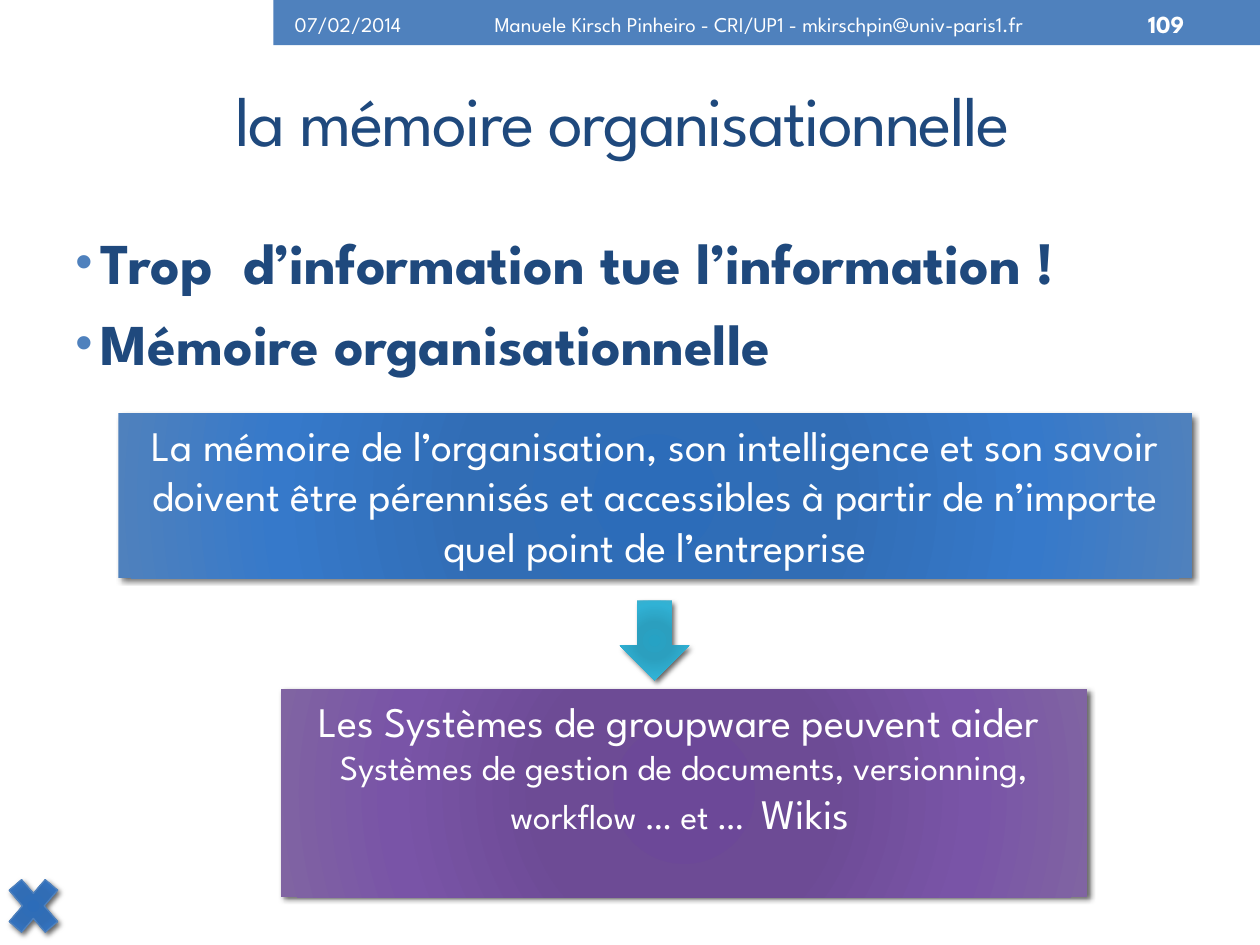
from lxml.etree import SubElement
from pptx import Presentation
from pptx.dml.color import RGBColor
from pptx.enum.shapes import MSO_SHAPE
from pptx.enum.text import MSO_ANCHOR, PP_ALIGN
from pptx.oxml import parse_xml
from pptx.oxml.ns import nsdecls, qn
from pptx.util import Inches, Pt

FONT = "League Spartan"
COLORS = {"accent": "4F81BD", "navy": "1F497D", "white": "FFFFFF"}
STOPS = (0, 34, 70, 100)
GRADIENTS = {
    "blue": ("2C6CB9", "316DB5", "3679CA", "4F81BD"),
    "purple": ("6C4898", "6D4B95", "7954A7", "8064A2"),
    "teal": ("26A2C4", "2B9FBF", "30B2D5", "4BACC6"),
}


def add_gradient_shape(kind, left, top, width, height, gradient):
    """Add a preset shape with a radial gradient and a soft shadow."""
    shape = slide.shapes.add_shape(
        kind, Inches(left), Inches(top), Inches(width), Inches(height))
    shape.line.fill.background()
    stops = "".join(
        f'<a:gs pos="{stop * 1000}"><a:srgbClr val="{color}"/></a:gs>'
        for stop, color in zip(STOPS, GRADIENTS[gradient]))
    properties = shape._element.spPr
    properties.find(qn("a:prstGeom")).addnext(parse_xml(
        f'<a:gradFill {nsdecls("a")} rotWithShape="1"><a:gsLst>{stops}</a:gsLst>'
        '<a:path path="circle"><a:fillToRect l="100000" t="100000" r="100000" '
        'b="100000"/></a:path></a:gradFill>'))
    shape.shadow.inherit = False
    properties.find(qn("a:effectLst")).append(parse_xml(
        f'<a:outerShdw {nsdecls("a")} blurRad="{Pt(3)}" dist="{Pt(2)}" '
        'dir="2700000" rotWithShape="0"><a:srgbClr val="000000">'
        '<a:alpha val="60000"/></a:srgbClr></a:outerShdw>'))
    return shape


def style_paragraph(paragraph, size, color, align=PP_ALIGN.LEFT, bold=False):
    paragraph.alignment = align
    paragraph.font.name = FONT
    paragraph.font.size = Pt(size)
    paragraph.font.bold = bold
    paragraph.font.color.rgb = RGBColor.from_string(COLORS[color])


presentation = Presentation()
presentation.slide_width = Inches(10)
presentation.slide_height = Inches(7.5)
slide = presentation.slides.add_slide(presentation.slide_layouts[6])

# Header band
band = slide.shapes.add_shape(
    MSO_SHAPE.RECTANGLE, Inches(2.17), 0, Inches(7.83), Inches(0.36))
band.fill.solid()
band.fill.fore_color.rgb = RGBColor.from_string(COLORS["accent"])
band.line.fill.background()
band.shadow.inherit = False

# Header texts and title
single_lines = [
    ("07/02/2014", 2.24, 0.02, 1.1, 0.34, 12, "white", PP_ALIGN.LEFT, False),
    ("Manuele Kirsch Pinheiro - CRI/UP1 - mkirschpin@univ-paris1.fr",
     3.19, 0.02, 5.67, 0.34, 12, "white", PP_ALIGN.CENTER, False),
    ("109", 8.94, 0.02, 0.56, 0.34, 14, "white", PP_ALIGN.RIGHT, True),
    ("la mémoire organisationnelle ",
     0.51, 0.44, 8.99, 1, 40, "navy", PP_ALIGN.CENTER, False),
]
for text, left, top, width, height, size, color, align, bold in single_lines:
    box = slide.shapes.add_textbox(
        Inches(left), Inches(top), Inches(width), Inches(height))
    box.text_frame.word_wrap = True
    box.text_frame.vertical_anchor = MSO_ANCHOR.MIDDLE
    paragraph = box.text_frame.paragraphs[0]
    run = paragraph.add_run()
    run.text = text
    style_paragraph(paragraph, size, color, align, bold)
# The title, added last, has tightened letters
run.font._element.set("spc", "-100")

# Bulleted body
body = slide.shapes.add_textbox(
    Inches(0.5), Inches(1.75), Inches(9.27), Inches(5.13)).text_frame
body.word_wrap = True
bullets = ["Trop  d’information tue l’information !", "Mémoire organisationnelle"]
for index, text in enumerate(bullets):
    paragraph = body.add_paragraph() if index else body.paragraphs[0]
    paragraph.text = text
    if index:
        paragraph.space_before = Pt(6.6)
    properties = paragraph._element.get_or_add_pPr()
    properties.set("marL", str(Inches(0.2)))
    properties.set("indent", str(-Inches(0.2)))
    bullet_color = SubElement(properties, qn("a:buClr"))
    SubElement(bullet_color, qn("a:srgbClr"), val=COLORS["accent"])
    SubElement(properties, qn("a:buSzPct"), val="85000")
    SubElement(properties, qn("a:buFont"), typeface="Arial")
    SubElement(properties, qn("a:buChar"), char="•")
    style_paragraph(paragraph, 33, "navy", bold=True)

# Groupware box
groupware = add_gradient_shape(
    MSO_SHAPE.RECTANGLE, 2.23, 5.47, 6.4, 1.65, "purple").text_frame
groupware.word_wrap = True
groupware.vertical_anchor = MSO_ANCHOR.TOP
groupware.margin_left = groupware.margin_right = Inches(0.04)
heading = groupware.paragraphs[0]
heading.text = "Les Systèmes de groupware peuvent aider "
style_paragraph(heading, 24, "white", PP_ALIGN.CENTER)
details = groupware.add_paragraph()
style_paragraph(details, 20, "white", PP_ALIGN.CENTER)
for text, size in [
    ("Systèmes de gestion de documents, versionning, workflow … et …  ", 20),
    ("Wikis", 24),
    (" ", 20),
]:
    run = details.add_run()
    run.text = text
    run.font.size = Pt(size)

# Organisational memory box
memory = add_gradient_shape(
    MSO_SHAPE.RECTANGLE, 0.94, 3.28, 8.52, 1.31, "blue").text_frame
memory.word_wrap = True
memory.vertical_anchor = MSO_ANCHOR.TOP
paragraph = memory.paragraphs[0]
paragraph.text = (
    "La mémoire de l’organisation, son intelligence et son savoir doivent être "
    "pérennisés et accessibles à partir de n’importe quel point de l’entreprise")
style_paragraph(paragraph, 24, "white", PP_ALIGN.CENTER)

# Arrow between the boxes
add_gradient_shape(MSO_SHAPE.DOWN_ARROW, 4.92, 4.77, 0.55, 0.63, "teal")

# Corner cross
cross = add_gradient_shape(MSO_SHAPE.MATH_MULTIPLY, -0.01, 6.87, 0.55, 0.64, "blue")
cross.line.color.rgb = RGBColor.from_string(COLORS["accent"])
cross.line.width = Pt(0.75)

presentation.save("out.pptx")
